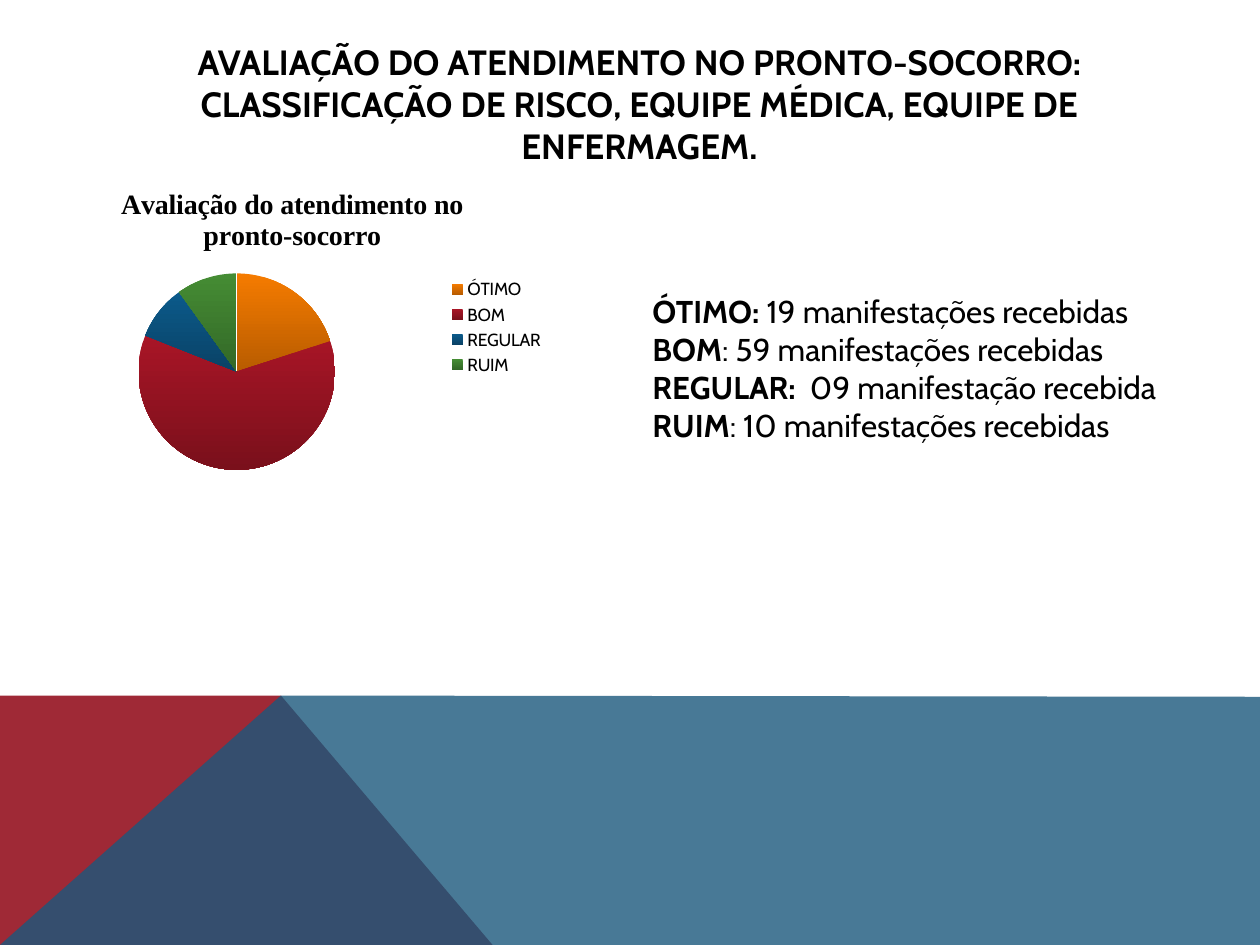
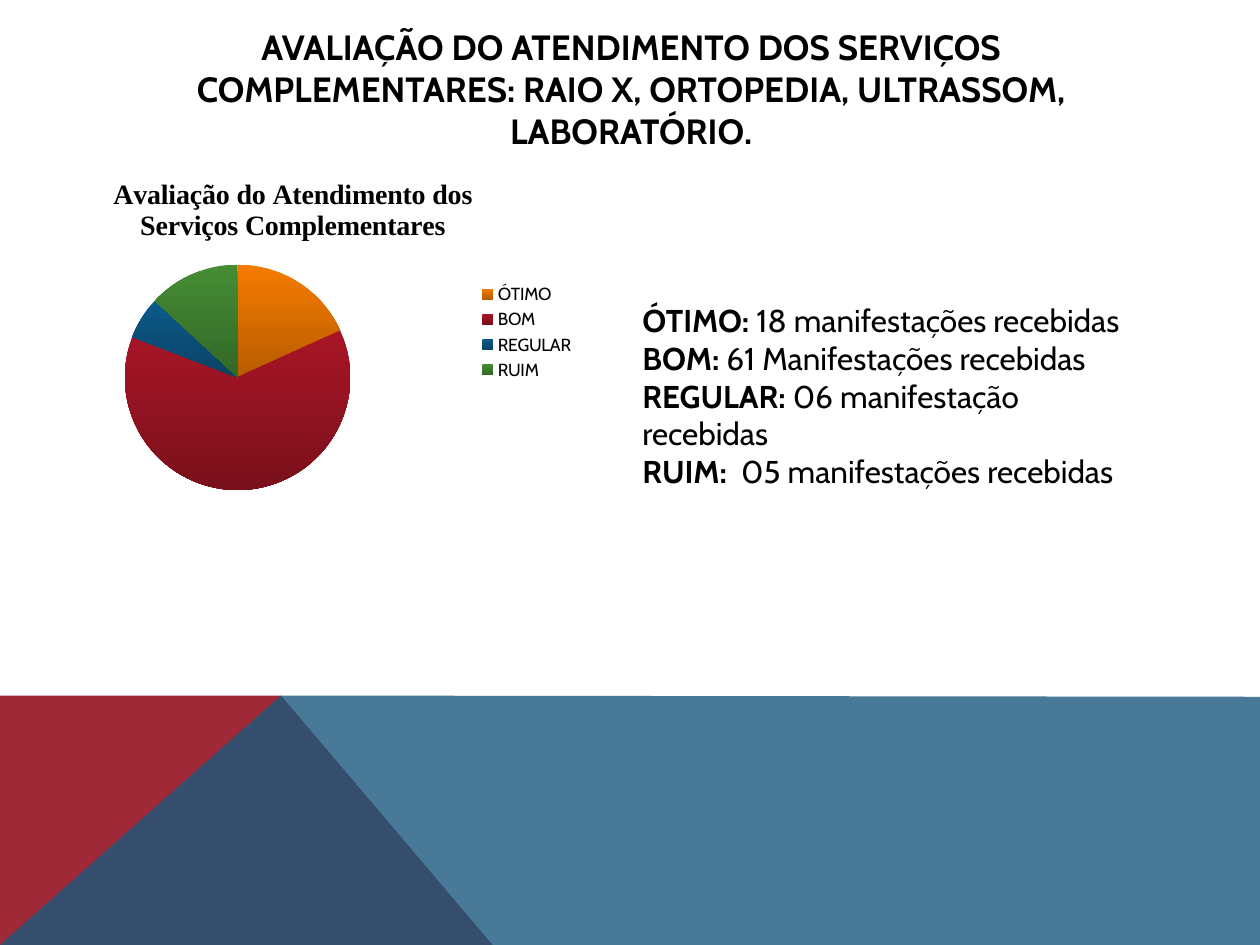
import pptx
import pptx.chart.data
import pptx.dml.color
import pptx.enum.chart
import pptx.enum.text
import pptx.oxml
import pptx.oxml.ns
import pptx.util
from pptx.util import Inches

FONT = "Cabin"
TITLE_FONT = "Times New Roman"
BLACK, RED, BLUE = "000000", "9F2936", "1B587C"
CATEGORIES = ["ÓTIMO", "BOM", "REGULAR", "RUIM"]
# Top and bottom shade of each slice
SLICES = [("F57B00", "B85C00"), ("A81526", "7A101B"),
          ("0B5A8A", "0A4266"), ("458C34", "336827")]

# Boxes are left, top, width, height in inches; a pie is left, top, diameter
SLIDES = [
    dict(title="AVALIAÇÃO DO ATENDIMENTO NO PRONTO-SOCORRO: CLASSIFICAÇÃO DE RISCO, "
               "EQUIPE MÉDICA, EQUIPE DE ENFERMAGEM.",
         title_box=(0.62, 0.4, 8.91, 0.85),
         chart_title="Avaliação do atendimento no pronto-socorro",
         chart_box=(0.23, 1.33, 4.18, 2.54), values=[20, 61, 9, 10],
         pie=(1.1, 2.17, 1.56), legend=(3.54, 2.18, 0.8, 0.83),
         notes_box=(5.08, 2.27, 4.45, 1.62),
         notes=[("ÓTIMO: ", "19 manifestações recebidas"),
                ("BOM", ": 59 manifestações recebidas"),
                ("REGULAR:  ", "09 manifestação recebida"),
                ("RUIM", ": 10 manifestações recebidas")]),
    dict(title="AVALIAÇÃO DO ATENDIMENTO DOS SERVIÇOS COMPLEMENTARES: RAIO X, "
               "ORTOPEDIA, ULTRASSOM, LABORATÓRIO.",
         title_box=(0.9, 0.4, 8.22, 0.6),
         chart_title="Avaliação do Atendimento dos Serviços Complementares",
         chart_box=(0, 1.25, 4.65, 2.77), values=[18, 62, 6, 13],
         pie=(0.99, 2.1, 1.79), legend=(3.78, 2.22, 0.8, 0.83),
         notes_box=(5, 2.34, 4.06, 1.92),
         notes=[("ÓTIMO: ", "18 manifestações recebidas"),
                ("BOM: ", "61 Manifestações recebidas"),
                ("REGULAR: ", "06 manifestação recebidas"),
                ("RUIM:  ", "05 manifestações recebidas")]),
]


def rgb(value):
    return pptx.dml.color.RGBColor.from_string(value)


def add_run(p, text, size, bold, font=FONT):
    r = p.add_run()
    r.text = text
    r.font.name = font
    r.font.size = pptx.util.Pt(size)
    r.font.bold = bold
    r.font.color.rgb = rgb(BLACK)


prs = pptx.Presentation()
prs.slide_width, prs.slide_height = Inches(10), Inches(7.5)

# Bottom bands, shared through the blank layout's slides: points, colour, opacity
BANDS = [
    ([(0, 7.5), (0, 5.52), (2.23, 5.52), (3.91, 7.5)], RED, 100),
    ([(0, 7.5), (2.23, 5.52), (10, 5.53), (10, 7.5)], BLUE, 80),
]

for page in SLIDES:
    s = prs.slides.add_slide(prs.slide_layouts[6])

    # Bands
    for points, color, opacity in BANDS:
        points = [(Inches(x), Inches(y)) for x, y in points]
        builder = s.shapes.build_freeform(*points[0])
        builder.add_line_segments(points[1:], close=True)
        sp = builder.convert_to_shape()
        sp.shadow.inherit = False
        sp.line.fill.background()
        sp.fill.solid()
        sp.fill.fore_color.rgb = rgb(color)
        if opacity < 100:
            clr = sp.fill._xPr.find(".//" + pptx.oxml.ns.qn("a:srgbClr"))
            alpha = pptx.oxml.parse_xml("<a:alpha %s val='%d'/>" % (
                pptx.oxml.ns.nsdecls("a"), opacity * 1000))
            clr.append(alpha)

    # Title
    tf = s.shapes.add_textbox(*map(Inches, page["title_box"])).text_frame
    tf.word_wrap = True
    tf.vertical_anchor = pptx.enum.text.MSO_ANCHOR.MIDDLE
    p = tf.paragraphs[0]
    p.alignment = pptx.enum.text.PP_ALIGN.CENTER
    add_run(p, page["title"], 20, True)

    # Pie chart
    data = pptx.chart.data.CategoryChartData()
    data.categories = CATEGORIES
    data.add_series("Series 1", page["values"])
    chart = s.shapes.add_chart(pptx.enum.chart.XL_CHART_TYPE.PIE,
                               *map(Inches, page["chart_box"]), data).chart
    chart.font.name = FONT
    chart.font.size = pptx.util.Pt(10)
    chart.font.color.rgb = rgb(BLACK)
    chart.has_title = True
    add_run(chart.chart_title.text_frame.paragraphs[0], page["chart_title"],
            16, True, TITLE_FONT)
    chart.has_legend = True
    chart.legend.position = pptx.enum.chart.XL_LEGEND_POSITION.RIGHT
    chart.legend.include_in_layout = True
    plot = chart.plots[0]
    plot.vary_by_categories = True
    for i, shades in enumerate(SLICES):
        fill = plot.series[0].points[i].format.fill
        fill.gradient()
        fill.gradient_angle = 270
        for stop, shade in zip(fill.gradient_stops, shades):
            stop.color.rgb = rgb(shade)

    # Place the pie and the legend as fractions of the chart box
    left, top, width, height = page["chart_box"]
    x, y, size = page["pie"]
    plot_area = chart._chartSpace.chart.plotArea
    for old in plot_area.findall(pptx.oxml.ns.qn("c:layout")):
        plot_area.remove(old)
    legend = chart.legend._element
    for old in legend.findall(pptx.oxml.ns.qn("c:layout")):
        legend.remove(old)
    for parent, index, target, box in [
            (plot_area, 0, "<c:layoutTarget val='inner'/>", (x, y, size, size)),
            (legend, 1, "", page["legend"])]:
        parts = [(box[0] - left) / width, (box[1] - top) / height,
                 box[2] / width, box[3] / height]
        modes = "<c:xMode val='edge'/><c:yMode val='edge'/>"
        values = "".join("<c:%s val='%.3f'/>" % pair for pair in zip("xywh", parts))
        parent.insert(index, pptx.oxml.parse_xml(
            "<c:layout %s><c:manualLayout>%s%s%s</c:manualLayout></c:layout>" % (
                pptx.oxml.ns.nsdecls("c"), target, modes, values)))

    # Counts of each rating
    tf = s.shapes.add_textbox(*map(Inches, page["notes_box"])).text_frame
    tf.word_wrap = True
    for i, (label, count) in enumerate(page["notes"]):
        p = tf.add_paragraph() if i else tf.paragraphs[0]
        add_run(p, label, 18, True)
        add_run(p, count, 18, False)

prs.save("out.pptx")
